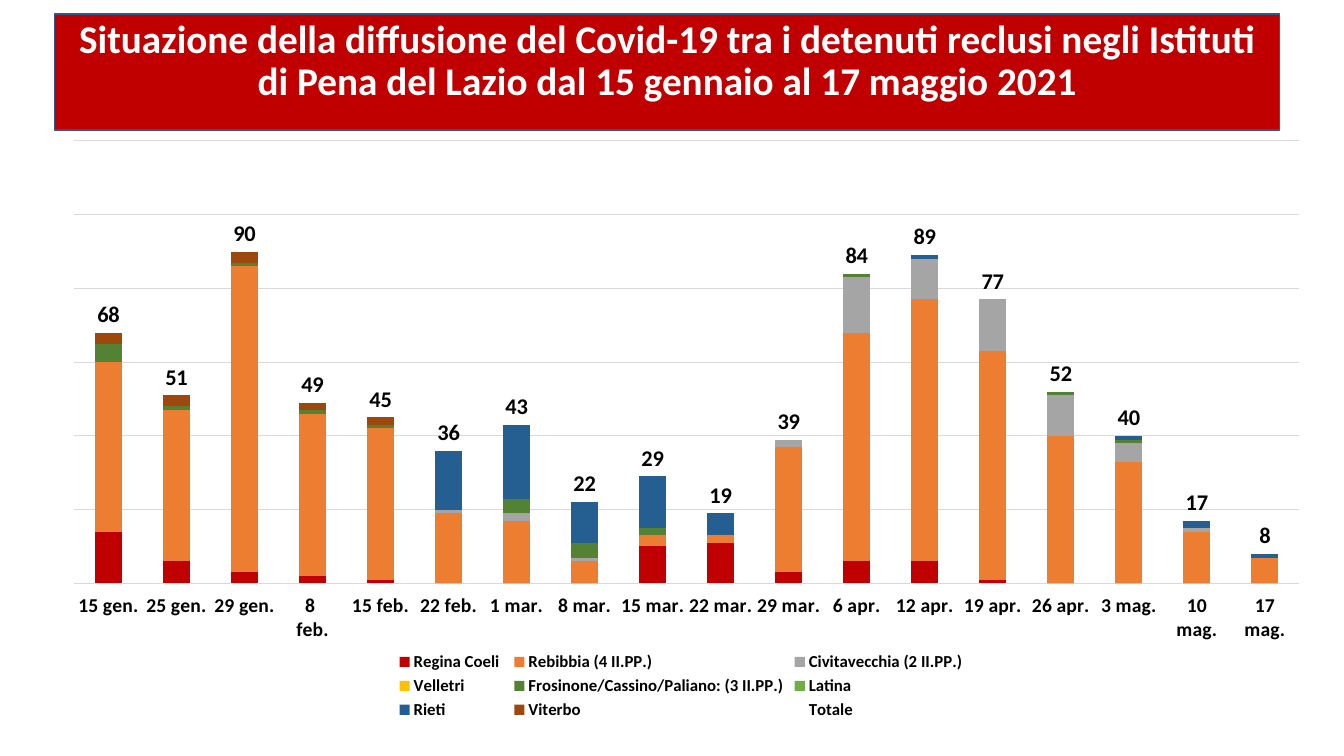
from typing import NamedTuple

from lxml.etree import SubElement
from pptx import Presentation
from pptx.chart.data import CategoryChartData
from pptx.dml.color import RGBColor
from pptx.enum.chart import (XL_CHART_TYPE, XL_LABEL_POSITION,
                             XL_LEGEND_POSITION, XL_TICK_LABEL_POSITION,
                             XL_TICK_MARK)
from pptx.enum.text import MSO_ANCHOR, PP_ALIGN
from pptx.oxml.ns import qn
from pptx.util import Inches, Pt

WIDE, HIGH = Inches(13.33), Inches(7.5)
FACE = "Calibri"


class Box(NamedTuple):
    """Left, top, width and height in percent of the slide."""
    x: float
    y: float
    w: float
    h: float


class Prison(NamedTuple):
    name: str
    color: str
    cases: list[int]


BANNER = Box(4.05, 1.87, 91.15, 15.33)
GRAPH = Box(4.05, 17.07, 93.25, 78.67)
PLOT = {"x": 0.016, "y": 0.02, "w": 0.977, "h": 0.744}

DATES = ["15 gen.", "25 gen.", "29 gen.", "8 \nfeb.", "15 feb.", "22 feb.",
         "1 mar.", "8 mar.", "15 mar.", "22 mar.", "29 mar.", "6 apr.",
         "12 apr.", "19 apr.", "26 apr.", "3 mag.", "10 mag.", "17 mag."]
NONE = [0] * len(DATES)

PRISONS = [
    Prison("Regina Coeli ", "C00000",
           [14, 6, 3, 2, 1, 0, 0, 0, 10, 11, 3, 6, 6, 1, 0, 0, 0, 0]),
    Prison("Rebibbia (4 II.PP.)", "ED7D31",
           [46, 41, 83, 44, 41, 19, 17, 6, 3, 2, 34, 62, 71, 62, 40, 33, 14, 7]),
    Prison("Civitavecchia (2 II.PP.)", "A5A5A5",
           [0, 0, 0, 0, 0, 1, 2, 1, 0, 0, 2, 15, 11, 14, 11, 5, 1, 0]),
    Prison("Velletri", "FFC000", NONE),
    Prison("Frosinone/Cassino/Paliano: (3 II.PP.)", "548235",
           [5, 1, 1, 1, 1, 0, 4, 4, 2, 0, 0, 1, 0, 0, 1, 1, 0, 0]),
    Prison("Latina", "70AD47", NONE),
    Prison("Rieti", "255E91",
           [0, 0, 0, 0, 0, 16, 20, 11, 14, 6, 0, 0, 1, 0, 0, 1, 2, 1]),
    Prison("Viterbo", "9E480E", [3, 3, 3, 2, 2] + [0] * 13),
]
TOTALS = [sum(day) for day in zip(*(p.cases for p in PRISONS))]


def paint(target, color: str) -> None:
    """Colour a fill (made solid first) or a font."""
    if hasattr(target, "solid"):
        target.solid()
        target.fore_color.rgb = RGBColor.from_string(color)
    else:
        target.color.rgb = RGBColor.from_string(color)


def style(font, size: float, color: str = "000000", bold: bool = True) -> None:
    font.name, font.size, font.bold = FACE, Pt(size), bold
    paint(font, color)


def rule(line, color: str, width: float) -> None:
    paint(line.fill, color)
    line.width = Pt(width)


def place(box: Box) -> list[int]:
    sides = (WIDE, HIGH, WIDE, HIGH)
    return [round(share * side / 100) for share, side in zip(box, sides)]


def add_title(slide, text: str) -> None:
    title = slide.shapes.title
    title.left, title.top, title.width, title.height = place(BANNER)
    paint(title.fill, "C00000")
    rule(title.line, "325491", 1)
    frame = title.text_frame
    frame.text = text
    frame.word_wrap = True
    frame.vertical_anchor = MSO_ANCHOR.TOP
    para = frame.paragraphs[0]
    para.alignment = PP_ALIGN.CENTER
    para.line_spacing = 0.9
    para.space_before = Pt(10)
    style(para.runs[0].font, 28, "FFFFFF")


def fix_plot(chart) -> None:
    """Pin the inner plot area inside the chart."""
    area = chart._chartSpace.chart.plotArea
    for old in area.findall(qn("c:layout")):
        area.remove(old)
    layout = SubElement(area, qn("c:layout"))
    area.insert(0, layout)
    manual = SubElement(layout, qn("c:manualLayout"))
    parts = {"layoutTarget": "inner", "xMode": "edge", "yMode": "edge", **PLOT}
    for tag, val in parts.items():
        SubElement(manual, qn(f"c:{tag}")).set("val", str(val))


def add_graph(slide) -> None:
    data = CategoryChartData()
    data.categories = DATES
    for prison in PRISONS:
        data.add_series(prison.name, prison.cases)
    data.add_series("Totale", TOTALS)
    chart = slide.shapes.add_chart(
        XL_CHART_TYPE.COLUMN_STACKED, *place(GRAPH), data).chart
    chart.has_title = False
    style(chart.font, 10, bold=False)
    fix_plot(chart)

    # Stacked columns
    plot = chart.plots[0]
    plot.gap_width, plot.overlap = 150, 100
    plot.vary_by_categories = False
    *stack, total = plot.series
    for series, prison in zip(stack, PRISONS):
        paint(series.format.fill, prison.color)

    # Unfilled total that carries the labels
    total.format.fill.background()
    total.format.line.fill.background()
    labels = total.data_labels
    labels.show_value = True
    labels.position = XL_LABEL_POSITION.INSIDE_BASE
    style(labels.font, 16)

    # Axes
    days = chart.category_axis
    days.major_tick_mark = days.minor_tick_mark = XL_TICK_MARK.NONE
    days.tick_label_position = XL_TICK_LABEL_POSITION.LOW
    style(days.tick_labels.font, 14)
    rule(days.format.line, "D9D9D9", 0.75)
    count = chart.value_axis
    count.minimum_scale, count.maximum_scale, count.major_unit = 0, 120, 20
    count.has_major_gridlines = True
    rule(count.major_gridlines.format.line, "D9D9D9", 0.75)
    count.visible = False

    # Legend
    chart.has_legend = True
    chart.legend.position = XL_LEGEND_POSITION.BOTTOM
    chart.legend.include_in_layout = False
    style(chart.legend.font, 12)


def main() -> None:
    deck = Presentation()
    deck.slide_width, deck.slide_height = WIDE, HIGH
    slide = deck.slides.add_slide(deck.slide_layouts[5])
    add_title(slide, "Situazione della diffusione del Covid-19 tra i detenuti "
                     "reclusi negli Istituti di Pena del Lazio dal 15 gennaio "
                     "al 17 maggio 2021")
    add_graph(slide)
    deck.save("out.pptx")


if __name__ == "__main__":
    main()
